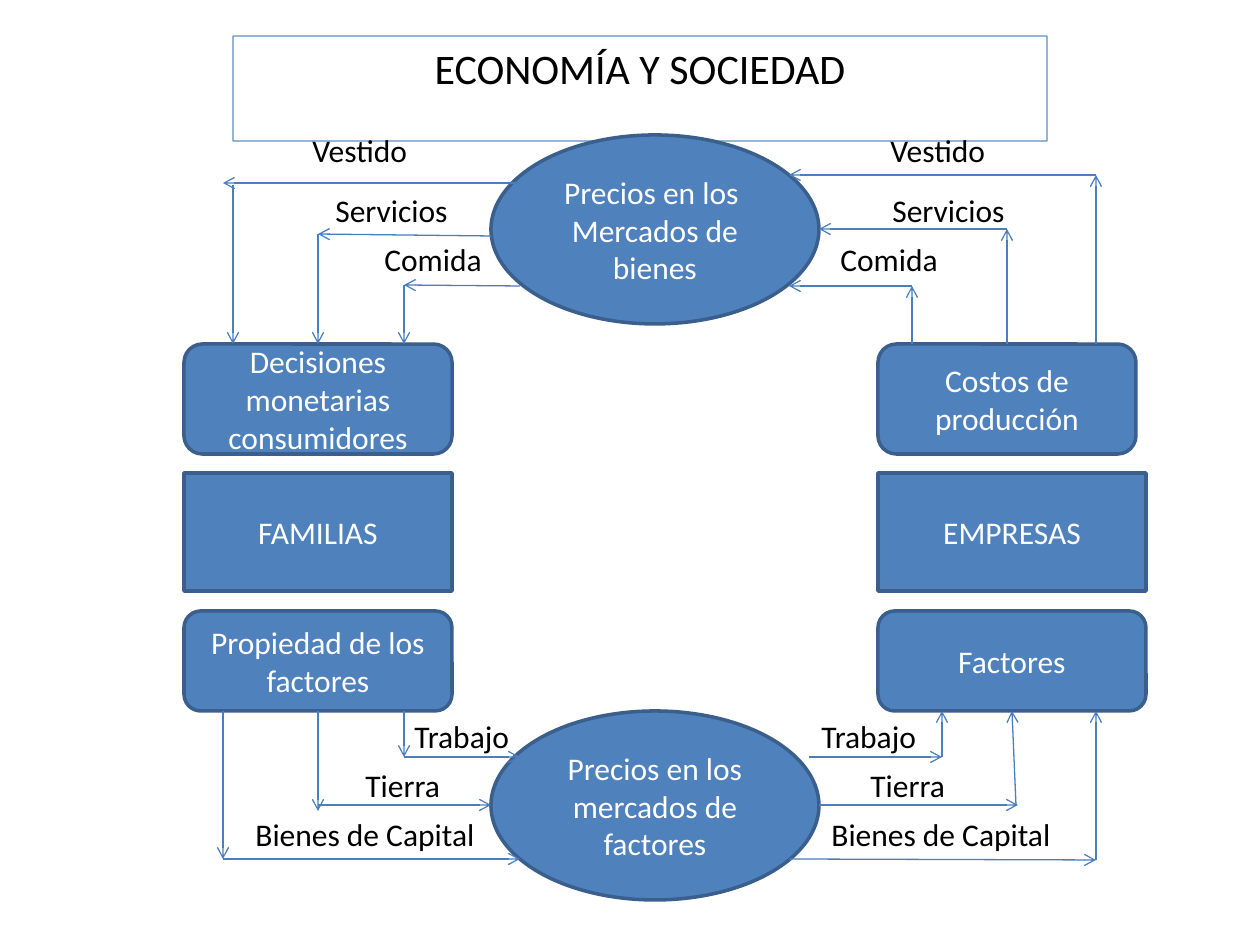
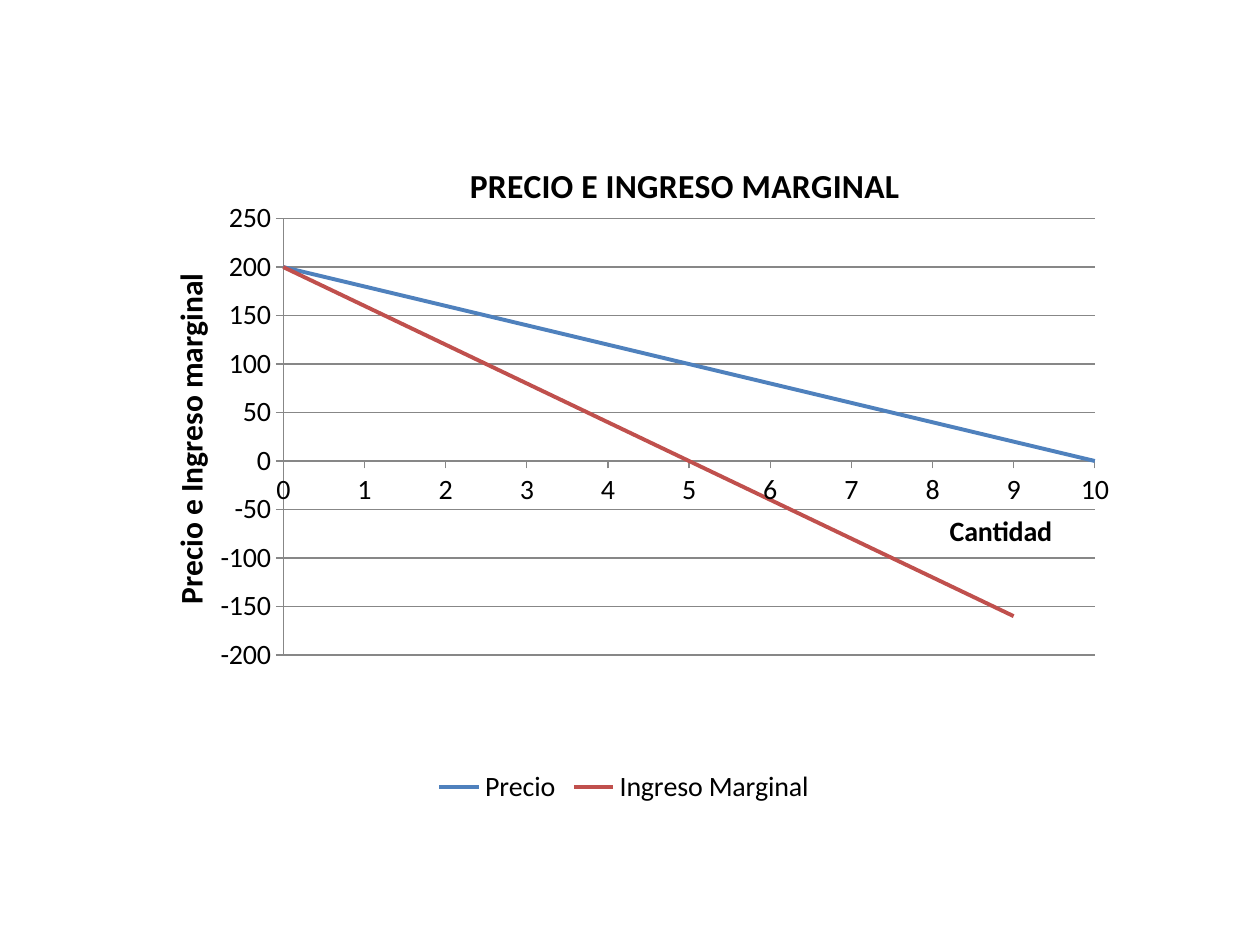
from dataclasses import dataclass
from itertools import pairwise
from typing import Any, NamedTuple, Optional

from pptx import Presentation
from pptx.chart.data import CategoryChartData
from pptx.dml.color import RGBColor as Rgb
from pptx.enum.chart import XL_CHART_TYPE as ChartType, XL_LEGEND_POSITION as LegendPosition
from pptx.enum.chart import XL_TICK_MARK as TickMark
from pptx.enum.shapes import MSO_CONNECTOR as Connector, MSO_SHAPE as Preset
from pptx.enum.text import MSO_ANCHOR as Anchor, MSO_AUTO_SIZE as AutoSize, PP_ALIGN as Align
from pptx.oxml.ns import qn
from pptx.oxml.xmlchemy import OxmlElement
from pptx.util import Emu, Pt

PX_PER_INCH = 126
TITLE_ONLY, BLANK = 5, 6
TOP, BOTTOM = 0, 2


@dataclass(frozen=True)
class Theme:
    font: str = "Calibri"
    ink: Rgb = Rgb(0, 0, 0)
    white: Rgb = Rgb(255, 255, 255)
    blue: Rgb = Rgb(0x4F, 0x81, 0xBD)
    outline: Rgb = Rgb(0x3A, 0x5F, 0x8C)
    arrow: Rgb = Rgb(0x4B, 0x7E, 0xBC)
    red: Rgb = Rgb(0xC0, 0x50, 0x4D)
    grid: Rgb = Rgb(0x87, 0x87, 0x87)
    title: float = 24
    body: float = 18
    chart: float = 16
    chart_title: float = 19.2
    thin: float = 0.75
    thick: float = 2
    series: float = 2.25


THEME = Theme()


class Area(NamedTuple):
    left: int
    top: int
    width: int
    height: int


class Node(NamedTuple):
    text: str
    preset: Preset
    area: Area


class Label(NamedTuple):
    text: str
    left: int
    top: int
    width: int


class Joint(NamedTuple):
    node: str
    site: int


class Route(NamedTuple):
    """Corner points with an arrow on every leg, and the boxes it joins."""
    points: list[tuple[int, int]]
    start: Optional[Joint] = None
    end: Optional[Joint] = None


# Grid of the circular flow
COLUMN_LEFT, COLUMN_RIGHT, BOX_WIDTH = 184, 878, 268
UPPER, MIDDLE, LOWER = (344, 110), (473, 118), (611, 100)
BOX_TOP, BOX_BOTTOM = UPPER[0], sum(LOWER)


def box(left: int, row: tuple[int, int], width: int = BOX_WIDTH) -> Area:
    return Area(left, row[0], width, row[1])


NODES = {
    "familias": Node("FAMILIAS", Preset.RECTANGLE, box(COLUMN_LEFT, MIDDLE)),
    "empresas": Node("EMPRESAS", Preset.RECTANGLE, box(COLUMN_RIGHT, MIDDLE)),
    "bienes": Node("Precios en los \nMercados de bienes", Preset.OVAL, Area(491, 135, 328, 189)),
    "mercado": Node("Precios en los mercados de factores", Preset.OVAL,
                    Area(491, 711, 328, 189)),
    "costos": Node("Costos de producción", Preset.ROUNDED_RECTANGLE,
                   box(COLUMN_RIGHT, UPPER, 258)),
    "factores": Node("Factores", Preset.ROUNDED_RECTANGLE, box(COLUMN_RIGHT, LOWER)),
    "decisiones": Node("Decisiones monetarias consumidores", Preset.ROUNDED_RECTANGLE,
                       box(COLUMN_LEFT, UPPER)),
    "propiedad": Node("Propiedad de los factores", Preset.ROUNDED_RECTANGLE,
                      box(COLUMN_LEFT, LOWER)),
}

LABEL_HEIGHT = 50
LABELS = [
    Label(text, left, top, width)
    for text, lefts, top, width in [
        ("Vestido", (300, 878), 125, 121),
        ("Servicios", (323, 880), 185, 139),
        ("Comida", (372, 828), 234, 123),
        ("Trabajo", (402, 809), 711, 121),
        ("Tierra", (353, 858), 760, 101),
        ("Bienes de Capital", (243, 819), 809, 247),
    ]
    for left in lefts
]

ROUTES = [
    # Firms to the goods market
    Route([(1096, BOX_TOP), (1096, 175), (789, 175)]),
    Route([(1007, BOX_TOP), (1007, 229), (819, 229)], start=Joint("costos", TOP)),
    Route([(912, BOX_TOP), (912, 286), (789, 286)]),
    # Goods market to the families
    Route([(520, 183), (223, 183)]),
    Route([(233, 185), (233, BOX_TOP)]),
    Route([(491, 236), (318, 234), (318, BOX_TOP)], end=Joint("decisiones", TOP)),
    Route([(520, 286), (404, 285), (404, BOX_TOP)]),
    # Families to the factor market
    Route([(404, BOX_BOTTOM), (404, 757), (520, 757)]),
    Route([(318, BOX_BOTTOM), (318, 811)], start=Joint("propiedad", BOTTOM)),
    Route([(318, 805), (491, 805)]),
    Route([(223, BOX_BOTTOM), (223, 859), (520, 859)]),
    # Factor market to the firms
    Route([(809, 757), (942, 757), (942, BOX_BOTTOM)]),
    Route([(819, 805), (1018, 805)]),
    Route([(1016, 805), (1012, BOX_BOTTOM)], end=Joint("factores", BOTTOM)),
    Route([(789, 859), (1096, 860), (1096, BOX_BOTTOM)]),
]


def px(length: int) -> Emu:
    return Emu(round(length * 914400 / PX_PER_INCH))


def emu(lengths: tuple[int, ...]) -> list[Emu]:
    return [px(length) for length in lengths]


def child(parent: Any, tag: str, **attributes: str) -> Any:
    element = OxmlElement(tag)
    for name, value in attributes.items():
        element.set(name, value)
    parent.append(element)
    return element


def style_font(font: Any, size: float, color: Rgb = THEME.ink, bold: bool = False) -> None:
    font.name, font.size, font.bold = THEME.font, Pt(size), bold
    font.color.rgb = color


def style_line(line: Any, color: Rgb, width: float) -> None:
    line.color.rgb, line.width = color, Pt(width)


def write(frame: Any, text: str, *, size: float = THEME.body, color: Rgb = THEME.ink,
          bold: bool = False, align: Optional[Align] = None) -> None:
    frame.text = text
    for paragraph in frame.paragraphs:
        paragraph.alignment = align
        for run in paragraph.runs:
            style_font(run.font, size, color, bold)


def add_title(slide: Any, text: str, area: Area) -> None:
    title = slide.shapes.title
    title.left, title.top, title.width, title.height = emu(area)
    style_line(title.line, THEME.arrow, THEME.thin)
    color = title.line._ln.find(f"{qn('a:solidFill')}/{qn('a:srgbClr')}")
    child(color, "a:alpha", val="87000")
    frame = title.text_frame
    frame.word_wrap, frame.auto_size = True, AutoSize.SHAPE_TO_FIT_TEXT
    frame.vertical_anchor = Anchor.TOP
    write(frame, text, size=THEME.title, align=Align.CENTER)


def add_node(slide: Any, node: Node) -> Any:
    shape = slide.shapes.add_shape(node.preset, *emu(node.area))
    shape.shadow.inherit = False
    shape.fill.solid()
    shape.fill.fore_color.rgb = THEME.blue
    style_line(shape.line, THEME.outline, THEME.thick)
    shape.text_frame.vertical_anchor = Anchor.MIDDLE
    write(shape.text_frame, node.text, color=THEME.white, align=Align.CENTER)
    return shape


def add_label(slide: Any, label: Label) -> None:
    frame = slide.shapes.add_textbox(
        *emu((label.left, label.top, label.width, LABEL_HEIGHT))).text_frame
    frame.word_wrap, frame.auto_size = False, AutoSize.SHAPE_TO_FIT_TEXT
    write(frame, label.text)


def add_route(slide: Any, route: Route, shapes: dict[str, Any]) -> None:
    arrows = []
    for begin, end in pairwise(route.points):
        arrow = slide.shapes.add_connector(Connector.STRAIGHT, *emu(begin + end))
        style_line(arrow.line, THEME.arrow, THEME.thin)
        child(arrow.line._ln, "a:tailEnd", type="arrow")
        child(arrow._element.spPr, "a:effectLst")
        arrows.append(arrow)
    if route.start:
        arrows[0].begin_connect(shapes[route.start.node], route.start.site)
    if route.end:
        arrows[-1].end_connect(shapes[route.end.node], route.end.site)


def place(element: Any, **fractions: float) -> None:
    """Fix a chart part at x, y (and w, h) as fractions of the chart."""
    for old in element.findall(qn("c:layout")):
        element.remove(old)
    layout = OxmlElement("c:layout")
    manual = child(layout, "c:manualLayout")
    if "w" in fractions:
        child(manual, "c:layoutTarget", val="inner")
    for side in "xy":
        child(manual, f"c:{side}Mode", val="edge")
    for side, value in fractions.items():
        child(manual, f"c:{side}", val=str(value))
    element.insert(0 if element.find(qn("c:tx")) is None else 1, layout)


def add_chart_title(title: Any, text: str, size: float, x: float, y: float) -> None:
    write(title.text_frame, text, size=size, bold=True)
    place(title._element, x=x, y=y)


def build_flow_slide(presentation: Any) -> None:
    slide = presentation.slides.add_slide(presentation.slide_layouts[TITLE_ONLY])
    add_title(slide, "ECONOMÍA Y SOCIEDAD", Area(233, 36, 814, 63))
    shapes = {name: add_node(slide, node) for name, node in NODES.items()}
    for route in ROUTES:
        add_route(slide, route, shapes)
    for label in LABELS:
        add_label(slide, label)


def build_chart_slide(presentation: Any) -> None:
    slide = presentation.slides.add_slide(presentation.slide_layouts[BLANK])
    data = CategoryChartData()
    data.categories = [str(quantity) for quantity in range(11)]
    data.add_series("Precio", [200 - 20 * quantity for quantity in range(11)])
    data.add_series("Ingreso Marginal", [200 - 40 * quantity for quantity in range(10)] + [None])
    chart = slide.shapes.add_chart(ChartType.LINE, *emu(Area(123, 106, 1002, 704)), data).chart
    style_font(chart.font, THEME.chart)
    place(chart._chartSpace.chart.plotArea, x=0.16, y=0.16, w=0.81, h=0.62)

    # Titles and legend
    category_axis, value_axis = chart.category_axis, chart.value_axis
    chart.has_title = True
    add_chart_title(chart.chart_title, "PRECIO E INGRESO MARGINAL", THEME.chart_title, 0.34, 0.07)
    add_chart_title(category_axis.axis_title, "Cantidad", THEME.chart, 0.82, 0.57)
    value_title = value_axis.axis_title
    add_chart_title(value_title, "Precio e Ingreso marginal", THEME.body, 0.04, 0.23)
    body = value_title.text_frame._txBody.find(qn("a:bodyPr"))
    body.set("rot", "-5400000")
    body.set("vert", "horz")
    chart.has_legend = True
    chart.legend.position = LegendPosition.BOTTOM
    chart.legend.include_in_layout = False

    # Axes and gridlines
    for axis in (category_axis, value_axis):
        axis.major_tick_mark, axis.minor_tick_mark = TickMark.OUTSIDE, TickMark.NONE
        style_line(axis.format.line, THEME.grid, THEME.thin)
    value_axis.minimum_scale, value_axis.maximum_scale = -200, 250
    value_axis.major_unit = 50
    value_axis.has_major_gridlines = True
    style_line(value_axis.major_gridlines.format.line, THEME.grid, THEME.thin)

    # Start the lines on the value axis
    cross_between = OxmlElement("c:crossBetween")
    cross_between.set("val", "midCat")
    value_axis._element.find(qn("c:crosses")).addnext(cross_between)

    # Series
    for series, color in zip(chart.plots[0].series, (THEME.blue, THEME.red)):
        series.smooth = False
        style_line(series.format.line, color, THEME.series)


def main() -> None:
    presentation = Presentation()
    presentation.slide_width, presentation.slide_height = px(1260), px(945)
    build_flow_slide(presentation)
    build_chart_slide(presentation)
    presentation.save("out.pptx")


if __name__ == "__main__":
    main()
